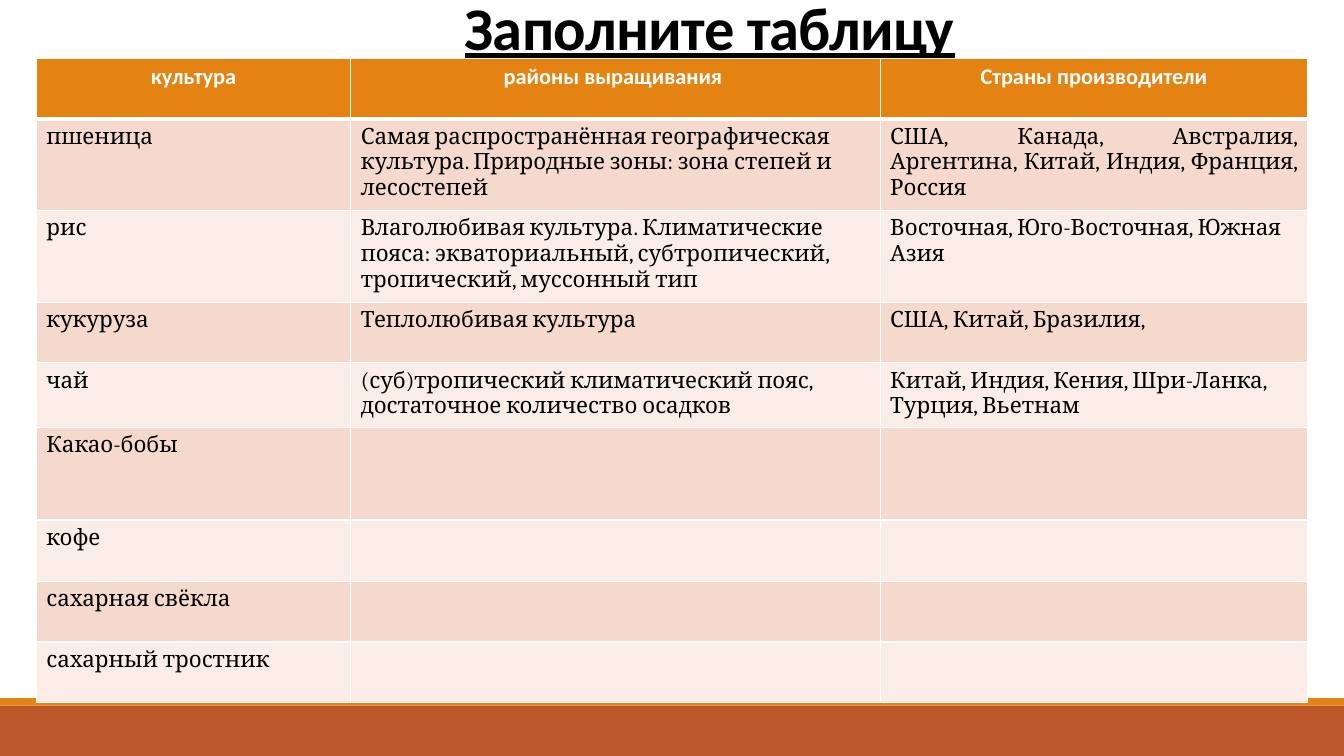
from lxml import etree
from pptx import Presentation, util as u
from pptx.dml.color import RGBColor
from pptx.enum import shapes, text
from pptx.oxml.ns import qn

WIDTH, HEIGHT = 13.33, 7.5
ORANGE = RGBColor(0xE4, 0x83, 0x12)
RUST = RGBColor(0xBD, 0x58, 0x2C)
ROW_TINTS = (RGBColor(0xF5, 0xD9, 0xCC), RGBColor(0xFA, 0xED, 0xE7))
WHITE = RGBColor(0xFF, 0xFF, 0xFF)
BLACK = RGBColor(0, 0, 0)

COLUMN_WIDTHS = (3.12, 5.25, 4.24)
ROW_HEIGHTS = (0.6, 0.91, 0.91, 0.6, 0.64, 0.92, 0.61, 0.6, 0.6)
TABLE_LEFT, TABLE_TOP = 0.36, 0.58
JUSTIFIED_CELL = (1, 2)

CROPS = (
    ("культура", "районы выращивания ", "Страны производители"),
    ("пшеница",
     "Самая распространённая географическая культура. "
     "Природные зоны: зона степей и лесостепей",
     "США, Канада, Австралия, Аргентина, Китай, Индия, Франция, Россия"),
    ("рис",
     "Влаголюбивая культура. Климатические пояса: экваториальный, "
     "субтропический, тропический, муссонный тип",
     "Восточная, Юго-Восточная, Южная Азия"),
    ("кукуруза", "Теплолюбивая культура", "США, Китай, Бразилия,"),
    ("чай",
     "(суб)тропический климатический пояс, достаточное количество осадков",
     "Китай, Индия, Кения, Шри-Ланка, Турция, Вьетнам"),
    ("Какао-бобы", "", ""),
    ("кофе", "", ""),
    ("сахарная свёкла", "", ""),
    ("сахарный тростник", "", ""),
)


def write(paragraph, words, size=16, font="Cambria", color=BLACK, bold=False,
          underline=False, align=text.PP_ALIGN.LEFT, tracking=None):
    """Append a formatted run; tracking is in points."""
    paragraph.alignment = align
    run = paragraph.add_run()
    run.text = words
    run.font.size = u.Pt(size)
    run.font.name = font
    run.font.color.rgb = color
    run.font.bold = bold
    run.font.underline = underline
    if tracking is not None:
        run.font._element.set("spc", str(round(tracking * 100)))


def add_title(slide):
    title = slide.shapes.title
    title.left, title.top = u.Inches(1.47), 0
    title.width, title.height = u.Inches(11), u.Inches(0.67)
    frame = title.text_frame
    frame.word_wrap = True
    frame.auto_size = text.MSO_AUTO_SIZE.NONE
    frame.vertical_anchor = text.MSO_ANCHOR.BOTTOM
    heading = frame.paragraphs[0]
    heading.line_spacing = 0.85
    style = dict(size=43.2, font="Calibri", tracking=-0.5,
                 align=text.PP_ALIGN.CENTER)
    write(heading, " ", **style)
    write(heading, "Заполните таблицу", bold=True, underline=True, **style)


def add_band(slide, top, height, color):
    """Draw a full-width stripe; top and height are shares of the slide."""
    band = slide.shapes.add_shape(
        shapes.MSO_SHAPE.RECTANGLE, 0, u.Inches(top * HEIGHT),
        u.Inches(WIDTH), u.Inches(height * HEIGHT))
    band.shadow.inherit = False
    band.fill.solid()
    band.fill.fore_color.rgb = color
    band.line.fill.background()


def set_borders(cell, **widths):
    """Give the cell white borders, with widths in points by side."""
    properties = cell._tc.get_or_add_tcPr()
    for position, (side, width) in enumerate(widths.items()):
        border = etree.Element(qn(f"a:ln{side}"), w=str(u.Pt(width)))
        fill = etree.SubElement(border, qn("a:solidFill"))
        etree.SubElement(fill, qn("a:srgbClr"), val=str(WHITE))
        properties.insert(position, border)


def fill_cell(cell, row, column):
    is_header = row == 0
    cell.fill.solid()
    cell.fill.fore_color.rgb = ORANGE if is_header else ROW_TINTS[(row - 1) % 2]
    set_borders(cell, L=1, R=1, T=3 if row == 1 else 1, B=3 if is_header else 1)
    words = CROPS[row][column]
    if not words:
        return
    paragraph = cell.text_frame.paragraphs[0]
    if is_header:
        write(paragraph, words, font="Calibri", color=WHITE, bold=True,
              align=text.PP_ALIGN.CENTER)
    elif (row, column) == JUSTIFIED_CELL:
        write(paragraph, words, align=text.PP_ALIGN.JUSTIFY)
    else:
        write(paragraph, words)


def add_crop_table(slide):
    table = slide.shapes.add_table(
        len(ROW_HEIGHTS), len(COLUMN_WIDTHS),
        u.Inches(TABLE_LEFT), u.Inches(TABLE_TOP),
        u.Inches(sum(COLUMN_WIDTHS)), u.Inches(sum(ROW_HEIGHTS))).table
    for column, width in zip(table.columns, COLUMN_WIDTHS):
        column.width = u.Inches(width)
    for row, height in enumerate(ROW_HEIGHTS):
        table.rows[row].height = u.Inches(height)
        for column in range(len(COLUMN_WIDTHS)):
            fill_cell(table.cell(row, column), row, column)


def main():
    deck = Presentation()
    deck.slide_width, deck.slide_height = u.Inches(WIDTH), u.Inches(HEIGHT)
    slide = deck.slides.add_slide(deck.slide_layouts.get_by_name("Title Only"))
    add_band(slide, 14 / 15, 1 / 15, RUST)
    add_band(slide, 14 / 15 - 0.01, 0.01, ORANGE)
    add_title(slide)
    add_crop_table(slide)
    deck.save("out.pptx")


if __name__ == "__main__":
    main()
